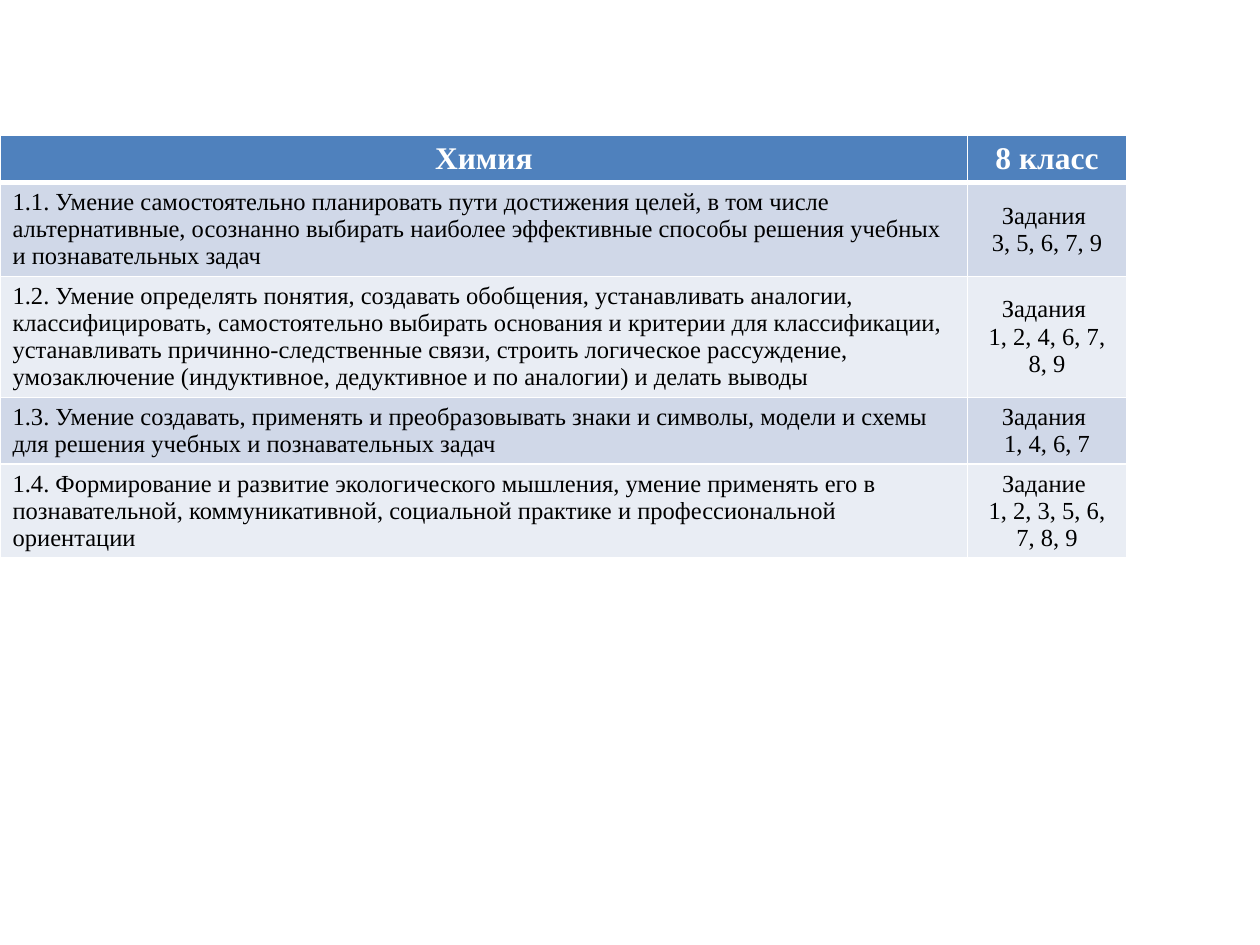
"""Build a slide with a table of chemistry skills and the tasks that test them."""
from lxml import etree
from pptx import Presentation
from pptx.dml.color import RGBColor
from pptx.enum.text import MSO_ANCHOR, PP_ALIGN
from pptx.oxml.ns import qn
from pptx.util import Inches, Pt

LEFT, CENTER = PP_ALIGN.LEFT, PP_ALIGN.CENTER
TOP, MIDDLE = MSO_ANCHOR.TOP, MSO_ANCHOR.MIDDLE

THEME = {
    "font": "Times New Roman",
    "header": {"size": Pt(18), "bold": True},
    "body": {"size": Pt(14), "bold": False},
    "header_text": "FFFFFF",
    "body_text": "000000",
    "header_fill": "4F81BD",
    "bands": ("E9EDF4", "D0D8E8"),
    "border": "FFFFFF",
}

COLUMNS = (7.68, 1.26)
ROWS = (0.36, 0.74, 0.96, 0.53, 0.74)
TABLE_TOP = 1.07

SKILLS = (
    ("Химия", "8 класс"),
    ("1.1. Умение самостоятельно планировать пути достижения целей, в том числе "
     "альтернативные, осознанно выбирать наиболее эффективные способы решения учебных "
     "и познавательных задач",
     "Задания \n3, 5, 6, 7, 9"),
    ("1.2. Умение определять понятия, создавать обобщения, устанавливать аналогии, "
     "классифицировать, самостоятельно выбирать основания и критерии для классификации, "
     "устанавливать причинно-следственные связи, строить логическое рассуждение, "
     "умозаключение (индуктивное, дедуктивное и по аналогии) и делать выводы",
     "Задания \n1, 2, 4, 6, 7, 8, 9"),
    ("1.3. Умение создавать, применять и преобразовывать знаки и символы, модели и схемы "
     "для решения учебных и познавательных задач",
     "Задания \n1, 4, 6, 7"),
    ("1.4. Формирование и развитие экологического мышления, умение применять его в "
     "познавательной, коммуникативной, социальной практике и профессиональной ориентации",
     "Задание \n1, 2, 3, 5, 6, 7, 8, 9"),
)


def add_borders(cell, top_width, bottom_width):
    """Draw the four edges of a cell in the border colour."""
    properties = cell._tc.get_or_add_tcPr()
    for edge, width in (("L", 1), ("R", 1), ("T", top_width), ("B", bottom_width)):
        line = etree.SubElement(properties, qn(f"a:ln{edge}"), w=str(Pt(width)))
        fill = etree.SubElement(line, qn("a:solidFill"))
        etree.SubElement(fill, qn("a:srgbClr"), val=THEME["border"])


presentation = Presentation()
presentation.slide_width, presentation.slide_height = Inches(10), Inches(7.5)
slide = presentation.slides.add_slide(presentation.slide_layouts[6])

skills_table = slide.shapes.add_table(
    len(ROWS), len(COLUMNS), 0, Inches(TABLE_TOP),
    Inches(sum(COLUMNS)), Inches(sum(ROWS))).table
for column, width in zip(skills_table.columns, COLUMNS):
    column.width = Inches(width)
for row, height in zip(skills_table.rows, ROWS):
    row.height = Inches(height)

for row_index, entries in enumerate(SKILLS):
    is_header = row_index == 0
    role = "header" if is_header else "body"
    fill_color = THEME["header_fill"] if is_header else THEME["bands"][row_index % 2]
    for column_index, entry in enumerate(entries):
        is_tasks = column_index == 1
        cell = skills_table.cell(row_index, column_index)
        add_borders(cell, 3 if row_index == 1 else 1, 3 if is_header else 1)
        cell.fill.solid()
        cell.fill.fore_color.rgb = RGBColor.from_string(fill_color)
        cell.vertical_anchor = MIDDLE if is_tasks and not is_header else TOP
        cell.text = entry
        for paragraph in cell.text_frame.paragraphs:
            paragraph.alignment = CENTER if is_header or is_tasks else LEFT
            for run in paragraph.runs:
                for attribute, value in {"name": THEME["font"], **THEME[role]}.items():
                    setattr(run.font, attribute, value)
                run.font.color.rgb = RGBColor.from_string(THEME[f"{role}_text"])

presentation.save("out.pptx")
